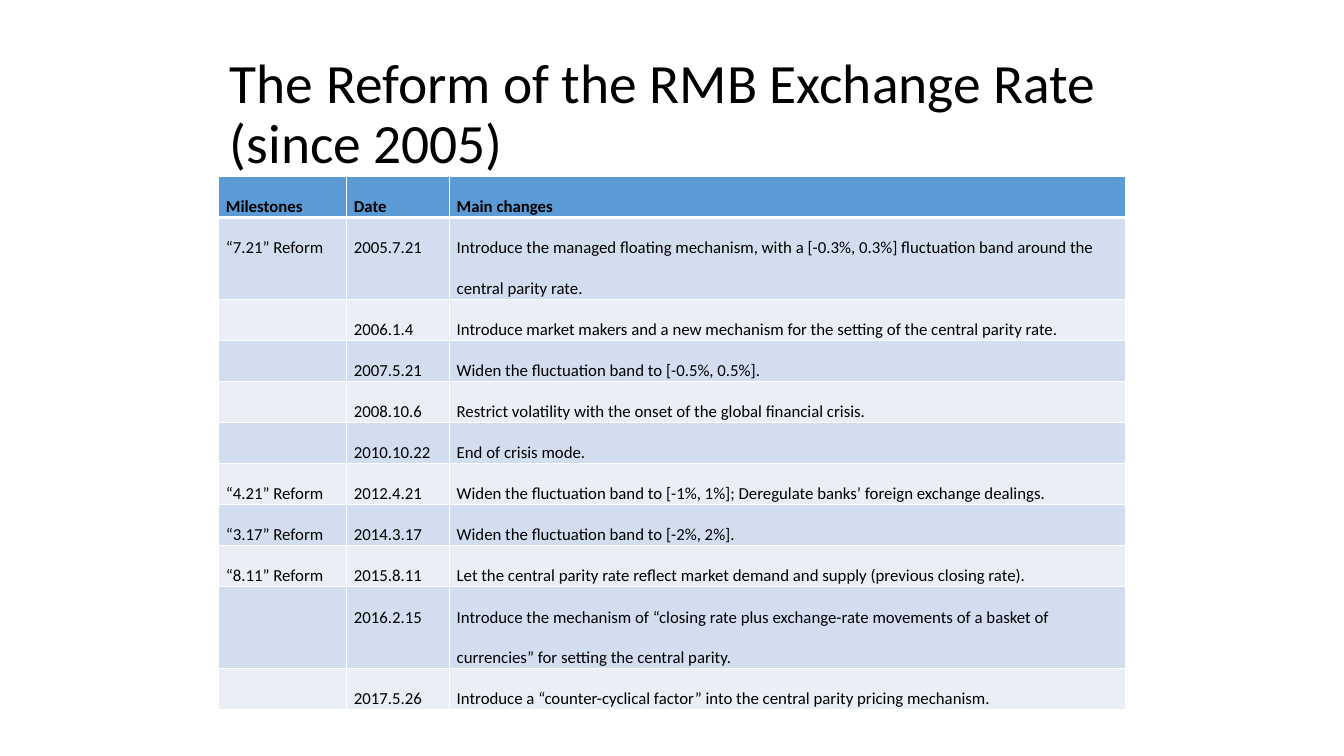
from dataclasses import dataclass

from lxml.etree import SubElement
from pptx import Presentation
from pptx.dml.color import RGBColor
from pptx.enum.text import MSO_ANCHOR, MSO_AUTO_SIZE, PP_ALIGN
from pptx.oxml.ns import qn
from pptx.slide import Slide
from pptx.table import _Cell
from pptx.text.text import TextFrame
from pptx.util import Emu, Inches, Pt

FONT = "Calibri"
BLACK = RGBColor(0x00, 0x00, 0x00)
WHITE = RGBColor(0xFF, 0xFF, 0xFF)
HEADER_BLUE = RGBColor(0x5B, 0x9B, 0xD5)
BANDS = (RGBColor(0xEA, 0xEF, 0xF7), RGBColor(0xD2, 0xDE, 0xEF))

SLIDE_WIDTH, SLIDE_HEIGHT = Inches(13.33), Inches(7.5)
COLUMN_SHARES = (9.53, 7.65, 50.27)  # percent of the slide's width
ROW_SHARE = 5.43  # percent of the slide's height


@dataclass(frozen=True)
class Reform:
    milestone: str
    date: str
    change: str


HEADINGS = Reform("Milestones", "Date", "Main changes")
REFORMS = (
    Reform("“7.21” Reform", "2005.7.21",
           "Introduce the managed floating mechanism, with a [-0.3%, 0.3%] "
           "fluctuation band around the central parity rate."),
    Reform("", "2006.1.4",
           "Introduce market makers and a new mechanism for the setting of the central parity rate."),
    Reform("", "2007.5.21", "Widen the fluctuation band to [-0.5%, 0.5%]."),
    Reform("", "2008.10.6", "Restrict volatility with the onset of the global financial crisis."),
    Reform("", "2010.10.22", "End of crisis mode."),
    Reform("“4.21” Reform", "2012.4.21",
           "Widen the fluctuation band to [-1%, 1%]; Deregulate banks’ foreign exchange dealings."),
    Reform("“3.17” Reform", "2014.3.17", "Widen the fluctuation band to [-2%, 2%]."),
    Reform("“8.11” Reform", "2015.8.11",
           "Let the central parity rate reflect market demand and supply (previous closing rate)."),
    Reform("", "2016.2.15",
           "Introduce the mechanism of “closing rate plus exchange-rate movements of a basket of "
           "currencies” for setting the central parity."),
    Reform("", "2017.5.26",
           "Introduce a “counter-cyclical factor” into the central parity pricing mechanism."),
)


def across(percent: float) -> Emu:
    return Emu(round(SLIDE_WIDTH * percent / 100))


def down(percent: float) -> Emu:
    return Emu(round(SLIDE_HEIGHT * percent / 100))


def write(frame: TextFrame, text: str, *, size: float, spacing: float, bold: bool = False) -> None:
    paragraph = frame.paragraphs[0]
    paragraph.alignment = PP_ALIGN.LEFT
    paragraph.line_spacing = spacing
    run = paragraph.add_run()
    run.text = text
    run.font.name = FONT
    run.font.size = Pt(size)
    run.font.bold = bold
    run.font.color.rgb = BLACK


def add_borders(cell: _Cell, *, bottom: float) -> None:
    properties = cell._tc.get_or_add_tcPr()
    for side, width in (("L", 1), ("R", 1), ("T", 1), ("B", bottom)):
        line = SubElement(properties, qn(f"a:ln{side}"), w=str(Pt(width)))
        solid = SubElement(line, qn("a:solidFill"))
        SubElement(solid, qn("a:srgbClr"), val=str(WHITE))


def fill_cell(cell: _Cell, text: str, *, color: RGBColor, header: bool) -> None:
    cell.margin_left = cell.margin_right = Inches(0.07)
    cell.margin_top = cell.margin_bottom = 0
    add_borders(cell, bottom=3 if header else 1)
    cell.fill.solid()
    cell.fill.fore_color.rgb = color
    if text:
        write(cell.text_frame, text, size=12, spacing=2.0, bold=header)


def add_title(slide: Slide, text: str) -> None:
    title = slide.shapes.title
    title.left, title.top = across(16.35), down(6.93)
    title.width, title.height = across(67.52), down(16.67)
    frame = title.text_frame
    frame.word_wrap = True
    frame.auto_size = MSO_AUTO_SIZE.NONE
    frame.vertical_anchor = MSO_ANCHOR.MIDDLE
    write(frame, text, size=39.6, spacing=0.9)


def add_reform_table(slide: Slide) -> None:
    entries = (HEADINGS, *REFORMS)
    timeline = slide.shapes.add_table(
        len(entries), len(COLUMN_SHARES), across(16.28), down(23.33),
        across(sum(COLUMN_SHARES)), down(ROW_SHARE * len(entries)),
    ).table
    for column, share in zip(timeline.columns, COLUMN_SHARES):
        column.width = across(share)
    for index, (row, entry) in enumerate(zip(timeline.rows, entries)):
        row.height = down(ROW_SHARE)
        header = index == 0
        color = HEADER_BLUE if header else BANDS[index % 2]
        for cell, text in zip(row.cells, (entry.milestone, entry.date, entry.change)):
            fill_cell(cell, text, color=color, header=header)


def main() -> None:
    deck = Presentation()
    deck.slide_width, deck.slide_height = SLIDE_WIDTH, SLIDE_HEIGHT
    slide = deck.slides.add_slide(deck.slide_layouts.get_by_name("Title Only"))
    # Heading
    add_title(slide, "The Reform of the RMB Exchange Rate (since 2005)")
    # Timeline of reforms
    add_reform_table(slide)
    deck.save("out.pptx")


if __name__ == "__main__":
    main()
